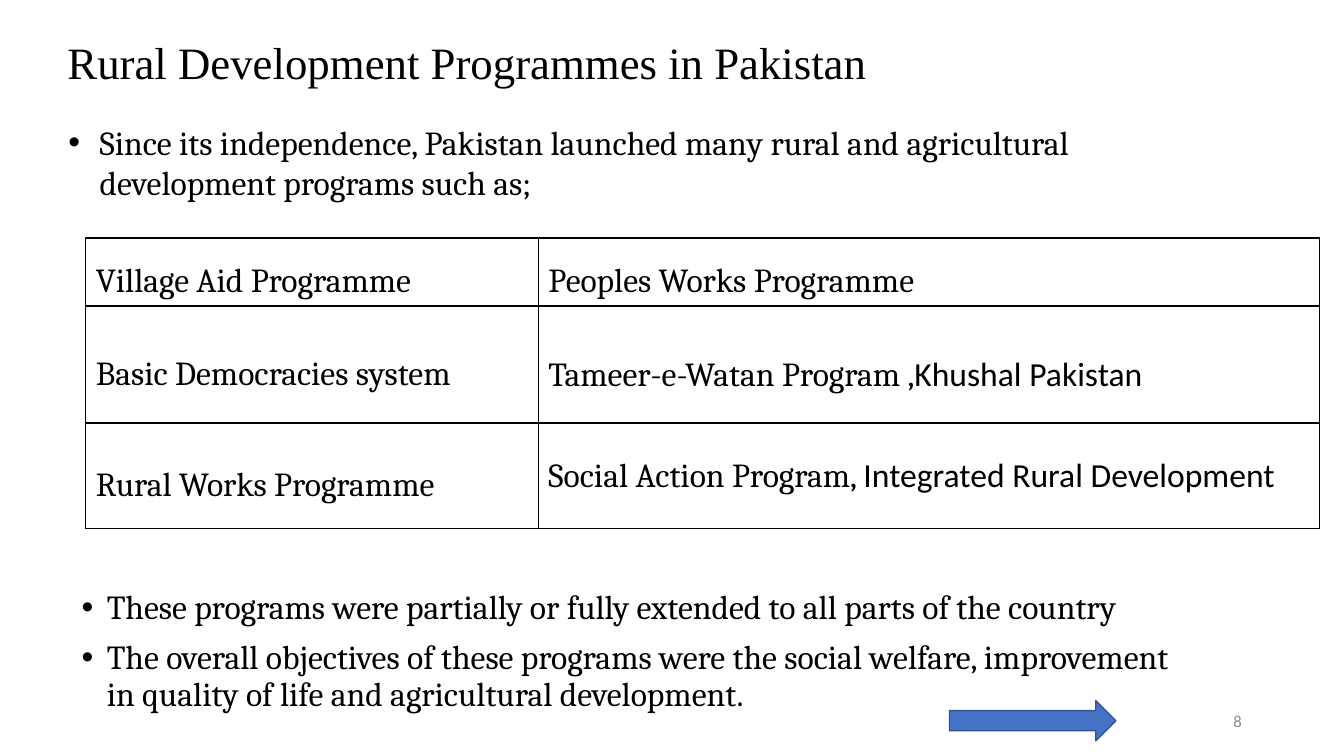
from dataclasses import dataclass

from lxml.etree import SubElement
from pptx import Presentation
from pptx.dml.color import RGBColor
from pptx.enum.shapes import MSO_SHAPE as Shape
from pptx.enum.text import MSO_ANCHOR as Anchor, MSO_AUTO_SIZE as AutoSize, PP_ALIGN as Align
from pptx.oxml.ns import qn
from pptx.util import Inches, Pt

BLACK = RGBColor(0x00, 0x00, 0x00)
GREY = RGBColor(0x8C, 0x8C, 0x8C)
BLUE = RGBColor(0x44, 0x72, 0xC4)
DARK_BLUE = RGBColor(0x32, 0x54, 0x91)

SERIF, SANS, TITLE_FONT = "Cambria", "Calibri", "Times New Roman"
WIDTH, HEIGHT = Inches(13.333), Inches(7.5)
NBSP = chr(160)


def across(percent: float) -> int:
    return round(WIDTH * percent / 100)


def down(percent: float) -> int:
    return round(HEIGHT * percent / 100)


@dataclass(frozen=True)
class Box:
    left: float
    top: float
    width: float
    height: float

    def emu(self) -> tuple[int, int, int, int]:
        return across(self.left), down(self.top), across(self.width), down(self.height)


@dataclass(frozen=True)
class Run:
    text: str
    font: str = SERIF


@dataclass(frozen=True)
class TextBlock:
    box: Box
    paragraphs: tuple[Run, ...]
    style: dict
    grow: bool = False
    anchor: Anchor = Anchor.TOP


@dataclass(frozen=True)
class Cell:
    runs: tuple[Run, ...]
    spacing: float | None = 1.5


TABLE_BOX = Box(6.38, 31.47, 91.81, 37.74)
COLUMNS = (33.68, 58.13)
ROWS = (8.27, 15.47, 14.0)
PROGRAMMES = (
    (Cell((Run("Village Aid Programme"),)),
     Cell((Run("Peoples Works Programme"),))),
    (Cell((Run("Basic Democracies system"),)),
     Cell((Run("Tameer-e-Watan Program ,"), Run("Khushal Pakistan", SANS)))),
    (Cell((Run("Rural Works Programme"),)),
     Cell((Run("Social Action Program, "), Run("Integrated Rural Development", SANS)), None)),
)

INTRO = ("Since its independence, Pakistan launched many rural and agricultural "
         + NBSP.join(("development", "programs", "such", "as;")))

BLOCKS = (
    TextBlock(Box(4.35, 15.47, 88.73, 12.13), (Run(INTRO),), dict(bullet=0.31), grow=True),
    TextBlock(
        Box(5.33, 77.47, 84.3, 25.73),
        (Run("These programs were partially or fully extended to all parts of the country"),
         Run("The overall objectives of these programs were the social welfare, "
             "improvement in quality of life and agricultural development.")),
        dict(bullet=0.25, spacing=0.9, before=10),
    ),
    TextBlock(Box(4.28, 3.87, 77.78, 8.53),
              (Run("Rural Development Programmes in Pakistan", TITLE_FONT),),
              dict(size=32), grow=True),
    TextBlock(Box(70.65, 92.67, 22.5, 5.33), (Run("8", SANS),),
              dict(size=12, color=GREY, align=Align.RIGHT), anchor=Anchor.MIDDLE),
)
ARROW_BOX = Box(70.65, 92.67, 12.38, 5.33)


def write(p, runs: tuple[Run, ...], *, size: float = 24, color: RGBColor = BLACK,
          align: Align = Align.LEFT, spacing: float | None = None,
          before: float | None = None, bullet: float | None = None) -> None:
    p.alignment = align
    if spacing is not None:
        p.line_spacing = spacing
    if before is not None:
        p.space_before = Pt(before)
    if bullet is not None:
        pPr = p._p.get_or_add_pPr()
        pPr.set("marL", str(Inches(bullet)))
        pPr.set("indent", str(-Inches(bullet)))
        SubElement(pPr, qn("a:buFont"), typeface="Arial")
        SubElement(pPr, qn("a:buChar"), char="•")
    for run in runs:
        r = p.add_run()
        r.text = run.text
        r.font.name = run.font
        r.font.size = Pt(size)
        r.font.color.rgb = color


def add_text(shapes, block: TextBlock) -> None:
    tf = shapes.add_textbox(*block.box.emu()).text_frame
    tf.word_wrap = True
    tf.auto_size = AutoSize.SHAPE_TO_FIT_TEXT if block.grow else AutoSize.NONE
    tf.vertical_anchor = block.anchor
    for i, run in enumerate(block.paragraphs):
        p = tf.add_paragraph() if i else tf.paragraphs[0]
        write(p, (run,), **block.style)


def add_borders(cell) -> None:
    tcPr = cell._tc.get_or_add_tcPr()
    for side in ("lnL", "lnR", "lnT", "lnB"):
        ln = SubElement(tcPr, qn(f"a:{side}"), w=str(Pt(1)))
        fill = SubElement(ln, qn("a:solidFill"))
        SubElement(fill, qn("a:srgbClr"), val=str(BLACK))


def add_programmes(shapes) -> None:
    table = shapes.add_table(len(ROWS), len(COLUMNS), *TABLE_BOX.emu()).table
    table.first_row = table.horz_banding = False
    for column, width in zip(table.columns, COLUMNS):
        column.width = across(width)
    for row, height, contents in zip(table.rows, ROWS, PROGRAMMES):
        row.height = down(height)
        for cell, content in zip(row.cells, contents):
            cell.vertical_anchor = Anchor.MIDDLE
            add_borders(cell)
            cell.fill.background()
            write(cell.text_frame.paragraphs[0], content.runs, spacing=content.spacing)


def add_arrow(shapes) -> None:
    sp = shapes.add_shape(Shape.RIGHT_ARROW, *ARROW_BOX.emu())
    sp.shadow.inherit = False
    sp.fill.solid()
    sp.fill.fore_color.rgb = BLUE
    sp.line.color.rgb = DARK_BLUE
    sp.line.width = Pt(1)


def main() -> None:
    prs = Presentation()
    prs.slide_width, prs.slide_height = WIDTH, HEIGHT
    s = prs.slides.add_slide(prs.slide_layouts[6])
    add_programmes(s.shapes)
    for block in BLOCKS:
        add_text(s.shapes, block)
    add_arrow(s.shapes)
    prs.save("out.pptx")


if __name__ == "__main__":
    main()
